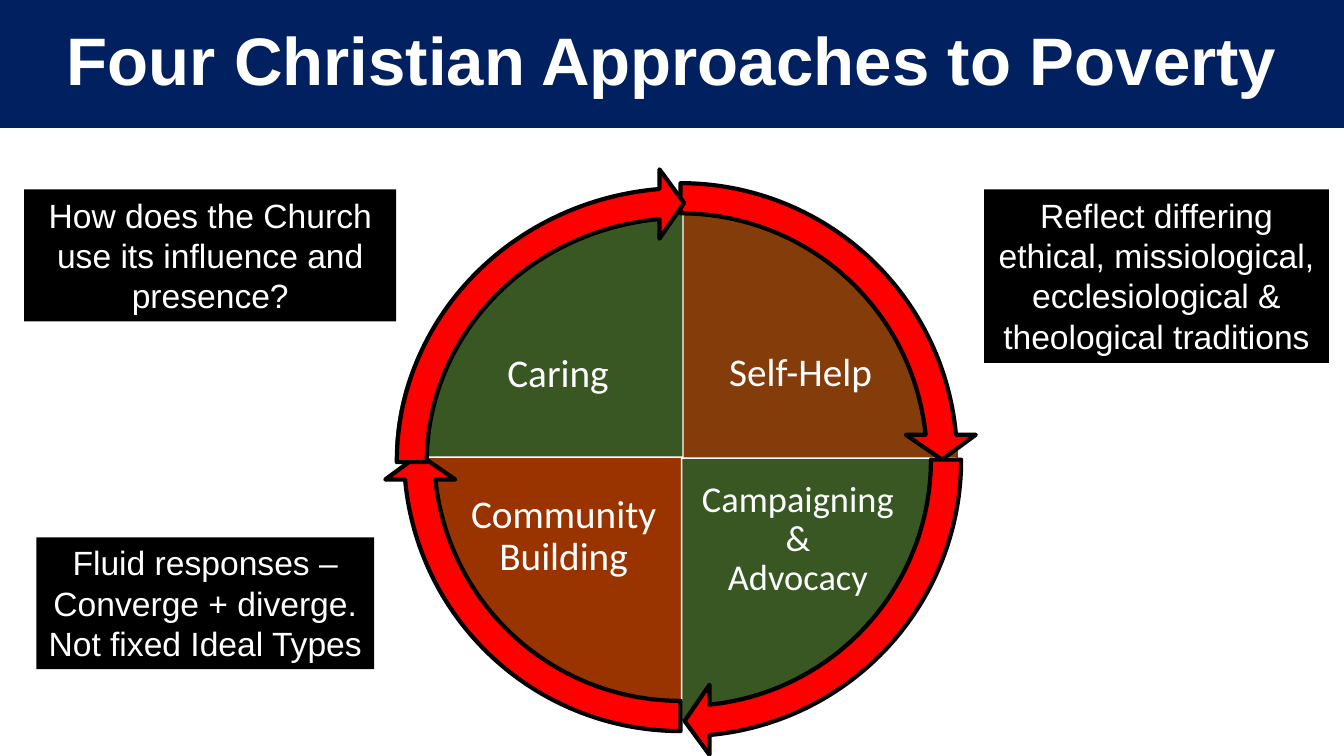
"""Build a slide on four Christian approaches to poverty."""
from pptx import Presentation
from pptx import util as u
from pptx.dml.color import RGBColor
from pptx.enum import shapes, text

KIND = shapes.MSO_SHAPE
WHITE, BLACK, NAVY, RED = "FFFFFF", "000000", "002060", "FF0000"
GREEN, BROWN, RUST = "385723", "843C0B", "993300"
QUARTER, SWEEP, FULL, TOP = 54, 50.725, 216, 162


def paint(fill, tone):
    fill.solid()
    fill.fore_color.rgb = RGBColor.from_string(tone)


def write(shape, words, size=24, face="Arial", tone=WHITE, bold=False,
          lead=None, inset=None, mid=True):
    frame = shape.text_frame
    frame.word_wrap = True
    frame.vertical_anchor = text.MSO_ANCHOR.MIDDLE if mid else text.MSO_ANCHOR.TOP
    if inset is not None:
        frame.margin_left = frame.margin_right = u.Inches(inset)
        frame.margin_top = frame.margin_bottom = u.Inches(inset)
    frame.text = words
    for para in frame.paragraphs:
        para.alignment = text.PP_ALIGN.CENTER
        if lead:
            para.line_spacing = lead
        for run in para.runs:
            run.font.size, run.font.name, run.font.bold = u.Pt(size), face, bold
            run.font.color.rgb = RGBColor.from_string(tone)


class Deck:
    def __init__(self):
        self.file = Presentation()
        self.file.slide_width = u.Inches(13.33)
        self.file.slide_height = u.Inches(7.5)
        self.slide = self.file.slides.add_slide(self.file.slide_layouts[5])
        paint(self.slide.background.fill, WHITE)
        self.wheel = None

    def title(self, words, box):
        head = self.slide.shapes.title
        head.left, head.top, head.width, head.height = map(u.Inches, box)
        paint(head.fill, NAVY)
        write(head, words, size=48, bold=True, lead=0.9)

    def group(self):
        self.wheel = self.slide.shapes.add_group_shape().shapes

    def shape(self, home, kind, box, tone, edge=None, width=1, turns=()):
        item = home.add_shape(kind, *map(u.Inches, box))
        item.shadow.inherit = False
        paint(item.fill, tone)
        if edge:
            paint(item.line.fill, edge)
            item.line.width = u.Pt(width)
        else:
            item.line.fill.background()
        for i, turn in enumerate(turns):
            item.adjustments[i] = turn
        return item

    def slice(self, box, tone, start):
        turns = (start, (start + QUARTER) % FULL)
        self.shape(self.wheel, KIND.PIE, box, tone, WHITE, 1, turns)

    def label(self, words, box, size):
        item = self.wheel.add_textbox(*map(u.Inches, box))
        write(item, words, size=size, face="Calibri", lead=0.9, inset=0.04)

    def arrow(self, box, start):
        turns = (0.051, 3.275, start + SWEEP, start, 0.059)
        self.shape(self.wheel, KIND.CIRCULAR_ARROW, box, RED, BLACK, 3, turns)

    def note(self, words, box):
        item = self.shape(self.slide.shapes, KIND.RECTANGLE, box, BLACK)
        write(item, words, mid=False)
        item.text_frame.auto_size = text.MSO_AUTO_SIZE.SHAPE_TO_FIT_TEXT


PARTS = [
    ("Self-Help", 28, BROWN, (3.99, 1.8, 5.52, 5.52),
     (6.92, 2.95, 2.04, 1.51), (3.81, 1.62, 5.88, 5.88)),
    ("Campaigning &\nAdvocacy", 26, GREEN, (3.98, 1.93, 5.5, 5.23),
     (6.9, 4.64, 2.03, 1.43), (3.85, 1.62, 5.88, 5.88)),
    ("Community Building", 28, RUST, (4.07, 1.9, 5.38, 5.23),
     (4.6, 4.61, 1.98, 1.43), (3.81, 1.57, 5.88, 5.88)),
    ("Caring", 28, GREEN, (3.91, 1.92, 5.73, 5.23),
     (4.48, 3, 2.11, 1.43), (3.74, 1.67, 6.09, 5.83)),
]
NOTES = [
    ("Fluid responses – Converge + diverge. Not fixed Ideal Types",
     (0.36, 5.33, 3.35, 1.31)),
    ("Reflect differing ethical, missiological, ecclesiological & "
     "theological traditions", (9.76, 1.88, 3.42, 1.72)),
    ("How does the Church use its influence and presence?",
     (0.24, 1.88, 3.69, 1.31)),
]


def main():
    deck = Deck()
    deck.title("Four Christian Approaches to Poverty", (0, 0, 13.33, 1.27))
    deck.group()
    starts = [(TOP + QUARTER * i) % FULL for i in range(len(PARTS))]
    for start, (words, size, tone, pie, spot, _) in zip(starts, PARTS):
        deck.slice(pie, tone, start)
        deck.label(words, spot, size)
    for start, part in zip(starts, PARTS):
        deck.arrow(part[-1], start)
    for words, box in NOTES:
        deck.note(words, box)
    deck.file.save("out.pptx")


if __name__ == "__main__":
    main()
